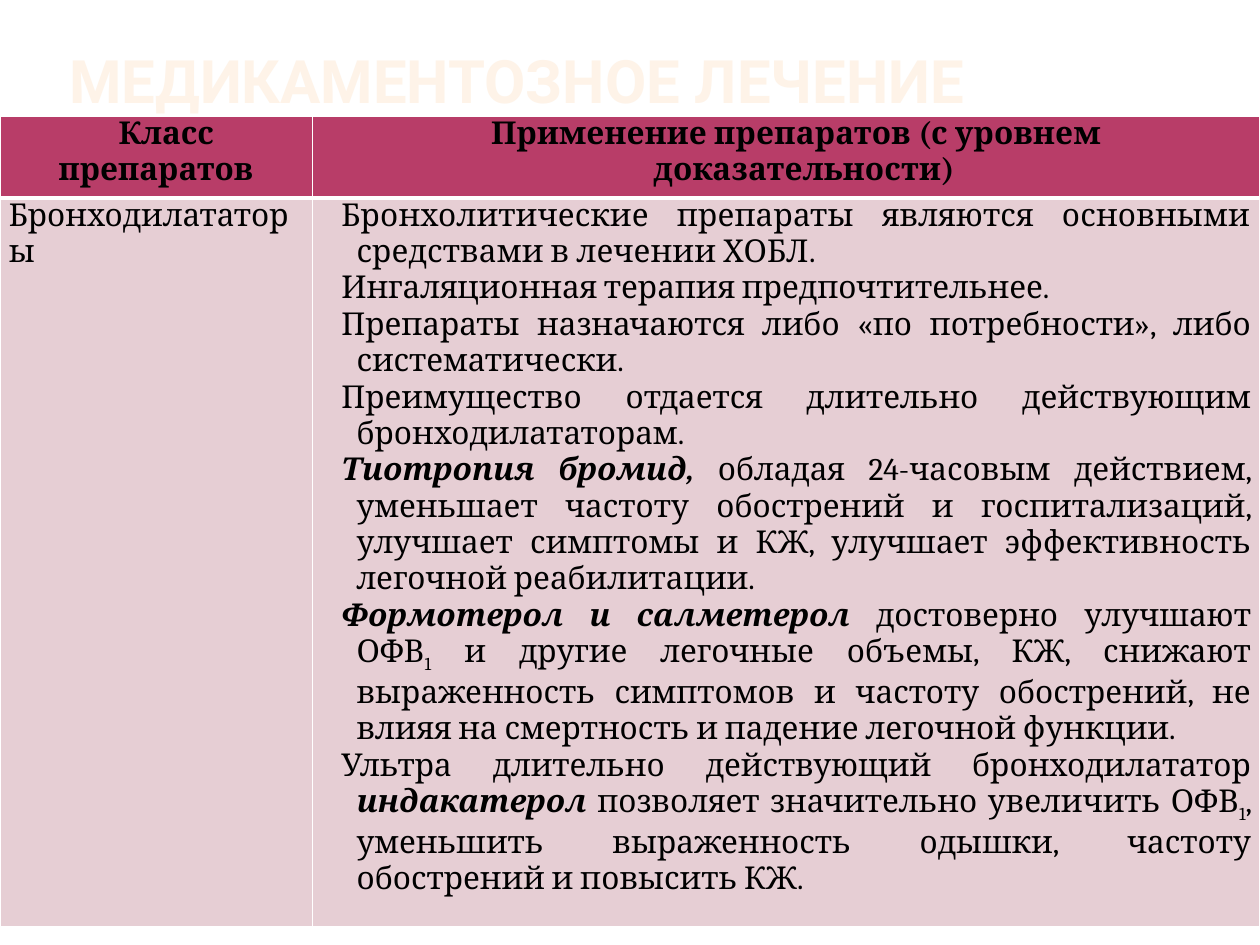
from lxml.etree import SubElement
from pptx import Presentation
from pptx.dml.color import RGBColor
from pptx.enum.text import MSO_ANCHOR as Anchor, PP_ALIGN as Align
from pptx.oxml.ns import qn
from pptx.util import Inches, Pt

CREAM = RGBColor(0xFE, 0xF3, 0xE8)
BLACK = RGBColor(0x00, 0x00, 0x00)
WHITE = RGBColor(0xFF, 0xFF, 0xFF)
RASPBERRY = RGBColor(0xB8, 0x3D, 0x68)
BLUSH = RGBColor(0xE6, 0xCE, 0xD4)

TITLE = "МЕДИКАМЕНТОЗНОЕ ЛЕЧЕНИЕ"
HEADERS = ["Класс препаратов", "Применение препаратов (с уровнем доказательности)"]
DRUG_CLASS = "Бронходилататоры"
PLAIN, STRONG, SUB = "plain", "strong", "sub"
USES = [
    [("Бронхолитические препараты являются основными средствами в лечении ХОБЛ.", PLAIN)],
    [("Ингаляционная терапия предпочтительнее.", PLAIN)],
    [("Препараты назначаются либо «по потребности», либо систематически. ", PLAIN)],
    [("Преимущество отдается длительно действующим бронходилататорам. ", PLAIN)],
    [("Тиотропия бромид, ", STRONG),
     ("обладая 24-часовым действием, уменьшает частоту обострений и госпитализаций, "
      "улучшает симптомы и КЖ, улучшает эффективность легочной реабилитации. ", PLAIN)],
    [("Формотерол и салметерол", STRONG),
     (" достоверно улучшают ОФВ", PLAIN), ("1", SUB),
     (" и другие легочные объемы, КЖ, снижают выраженность симптомов и частоту "
      "обострений, не влияя на смертность и падение легочной функции. ", PLAIN)],
    [("Ультра длительно действующий бронходилататор ", PLAIN),
     ("индакатерол", STRONG),
     (" позволяет значительно увеличить ОФВ", PLAIN), ("1", SUB),
     (", уменьшить выраженность одышки, частоту обострений и повысить КЖ. ", PLAIN)],
]


class SlideBuilder:
    title_font, body_font = "Roboto", "Cambria"
    title_size, body_size = 34.2, 18

    def __init__(self, deck):
        self.width, self.height = deck.slide_width, deck.slide_height
        self.page = deck.slides.add_slide(deck.slide_layouts[6])

    def place(self, left, top, width, height):
        return (round(left * self.width), round(top * self.height),
                round(width * self.width), round(height * self.height))

    def span(self, para, text, font, size, color, bold=False, style=PLAIN, spacing=0):
        span = para.add_run()
        span.text = text
        span.font.name, span.font.size = font, Pt(size)
        span.font.bold = bold or style == STRONG
        span.font.italic = style == STRONG
        span.font.color.rgb = color
        props = span.font._element
        if style == SUB:
            props.set("baseline", "-25000")
        if spacing:
            props.set("spc", str(round(spacing * 100)))

    def title(self, text, *share):
        box = self.page.shapes.add_textbox(*self.place(*share))
        frame = box.text_frame
        frame.word_wrap = True
        frame.vertical_anchor = Anchor.BOTTOM
        frame.margin_left = frame.margin_right = Inches(0.05)
        frame.margin_top = frame.margin_bottom = 0
        self.span(frame.paragraphs[0], text, self.title_font, self.title_size, CREAM, bold=True)

    def table(self, top, columns, rows):
        shape = self.page.shapes.add_table(
            len(rows), len(columns), *self.place(0, top, sum(columns), sum(rows)))
        table = shape.table
        table.horz_banding = False
        for column, share in zip(table.columns, columns):
            column.width = round(share * self.width)
        for row, share in zip(table.rows, rows):
            row.height = round(share * self.height)
        return table

    def cell(self, cell, fill, borders):
        cell.margin_left = cell.margin_right = Inches(0.07)
        cell.margin_top = cell.margin_bottom = 0
        for side, points in borders:
            line = SubElement(cell._tc.get_or_add_tcPr(), qn(f"a:ln{side}"), w=str(Pt(points)))
            color = SubElement(SubElement(line, qn("a:solidFill")), qn("a:srgbClr"))
            color.set("val", str(WHITE))
        cell.fill.solid()
        cell.fill.fore_color.rgb = fill

    def paragraphs(self, cell, lines, align, left=0, first=0, tabs=(), bold=False, spacing=0):
        frame = cell.text_frame
        for index, spans in enumerate(lines):
            para = frame.add_paragraph() if index else frame.paragraphs[0]
            para.alignment = align
            props = para._p.get_or_add_pPr()
            props.set("marL", str(Inches(left)))
            props.set("indent", str(Inches(first)))
            if tabs:
                stops = SubElement(props, qn("a:tabLst"))
                for stop in tabs:
                    SubElement(stops, qn("a:tab"), pos=str(Inches(stop)), algn="l")
            for text, style in spans:
                self.span(para, text, self.body_font, self.body_size, BLACK, bold, style,
                          0 if index else spacing)


def main():
    deck = Presentation()
    deck.slide_width, deck.slide_height = Inches(10), Inches(7.5)
    slide = SlideBuilder(deck)
    slide.title(TITLE, 0.05, 0.35 / 7.5, 0.79, 0.57 / 7.5)

    table = slide.table(0.92 / 7.5, [0.248, 0.752], [0.65 / 7.5, 5.5 / 7.5])
    for column in range(2):
        slide.cell(table.cell(0, column), RASPBERRY, [("L", 1), ("R", 1), ("T", 1), ("B", 3)])
        slide.cell(table.cell(1, column), BLUSH, [("L", 1), ("R", 1), ("T", 3), ("B", 1)])

    hanging = {"left": 0.28, "first": -0.12, "spacing": 0.1}
    slide.paragraphs(table.cell(0, 0), [[(HEADERS[0], PLAIN)]], Align.CENTER,
                     first=0.16, tabs=[0.28], bold=True)
    slide.paragraphs(table.cell(0, 1), [[(HEADERS[1], PLAIN)]], Align.CENTER,
                     tabs=[0.08, 0.28], bold=True, **hanging)
    slide.paragraphs(table.cell(1, 0), [[(DRUG_CLASS, PLAIN)]], Align.JUSTIFY)
    slide.paragraphs(table.cell(1, 1), USES, Align.JUSTIFY, tabs=[0.12, 0.28], **hanging)
    deck.save("out.pptx")


if __name__ == "__main__":
    main()
